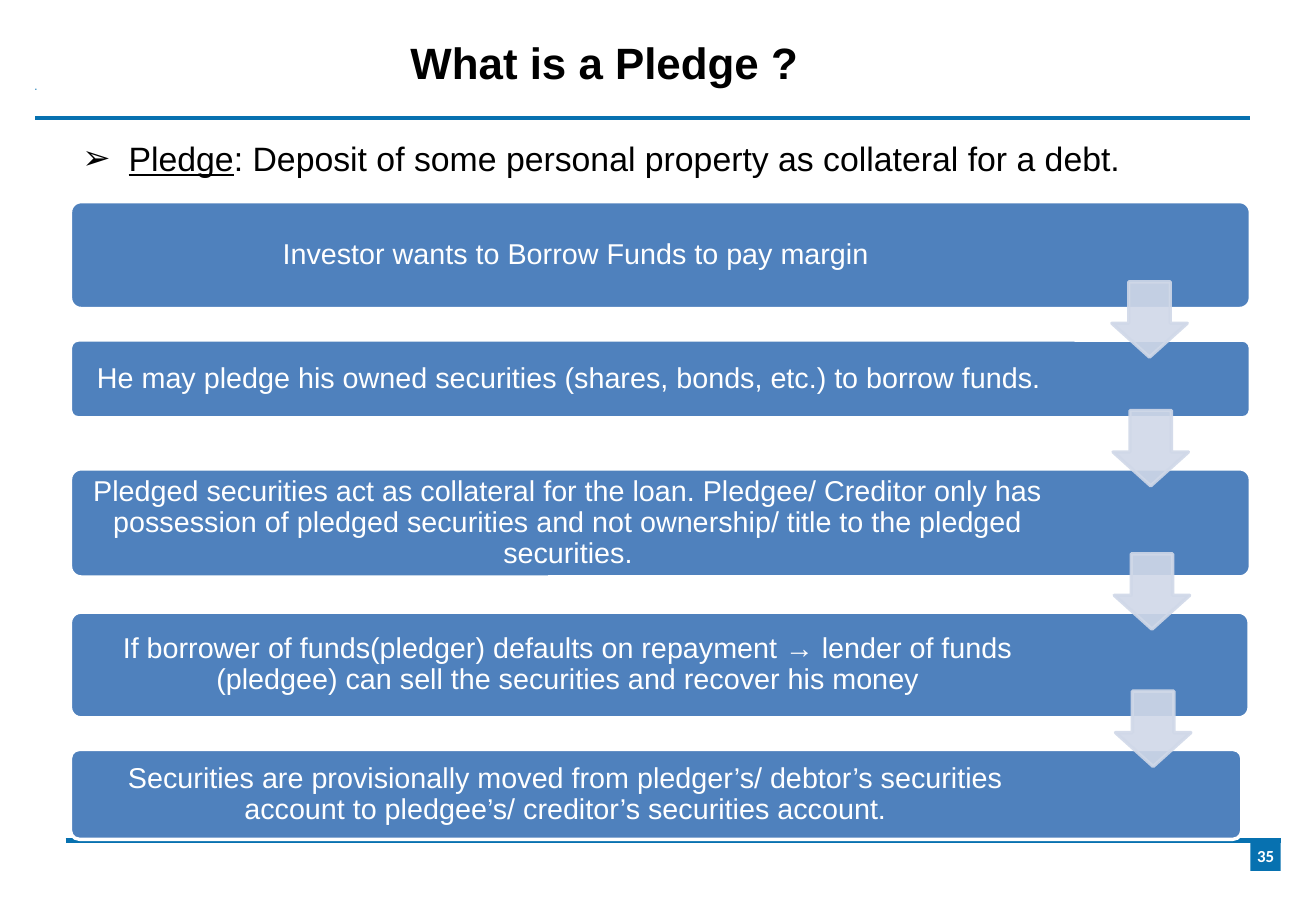
from pptx import Presentation
from pptx.dml.color import RGBColor as RGB
from pptx.enum.shapes import MSO_CONNECTOR as Conn, MSO_SHAPE as Shape
from pptx.enum.text import MSO_ANCHOR as Anchor, PP_ALIGN as Align
from pptx.oxml.ns import qn
from pptx.util import Inches, Pt
from lxml.etree import SubElement as Sub

# Content
TITLE = "What is a Pledge ?"
TERM, MEANING = "Pledge", ": Deposit of some personal property as collateral for a debt."
PAGE = "35"
# Steps: text, top, height, box width, text width
STEPS = [
    ("Investor wants to Borrow Funds to pay margin", 1.66, 0.88, 9.71, 8.26),
    ("He may pledge his owned securities (shares, bonds, etc.) to borrow funds.",
     2.8, 0.64, 9.71, 8.15),
    ("Pledged securities act as collateral for the loan. Pledgee/ Creditor only has "
     "possession of pledged securities and not ownership/ title to the pledged securities.",
     3.86, 0.89, 9.71, 8.13),
    ("If borrower of funds(pledger) defaults on repayment → lender of funds "
     "(pledgee) can sell the securities and recover his money", 5.04, 0.87, 9.7, 8.13),
    ("Securities are provisionally moved from pledger’s/ debtor’s securities "
     "account to pledgee’s/ creditor’s securities account.", 6.17, 0.74, 9.64, 8.09),
]

# Theme
THEME = {
    "rule": "0771B0", "box": "4F81BD", "arrow": "D0D8E8", "white": "FFFFFF", "black": "000000",
    "title": 26, "lead": 20, "step": 17, "page": 10, "font": "Arial", "small": "Calibri",
}

# Layout, in inches
WIDE, HIGH = 10.83, 7.5
LEFT = 0.58
RULES = [(0.29, 0.97), (0.54, 6.92)]
SPAN = 10
PAD = 0.03
ARROW, DIP = 0.62, 0.14
BADGE = 0.25

deck = Presentation()
deck.slide_width, deck.slide_height = Inches(WIDE), Inches(HIGH)
slide = deck.slides.add_slide(deck.slide_layouts[6])
shapes = slide.shapes


def tint(name):
    return RGB.from_string(THEME[name])


def put(obj, **vals):
    for key, val in vals.items():
        setattr(obj, key, val)


def fade(fill, share):
    color = fill.find(".//" + qn("a:srgbClr"))
    Sub(color, qn("a:alpha"), val=str(share * 1000))


def block(kind, x, y, w, h, fill, edge=None):
    item = shapes.add_shape(kind, *map(Inches, (x, y, w, h)))
    item.shadow.inherit = False
    item.fill.solid()
    item.fill.fore_color.rgb = tint(fill)
    if edge:
        item.line.color.rgb = tint(edge)
        item.line.width = Pt(2)
    else:
        item.line.fill.background()
    return item


def label(x, y, w, h):
    return shapes.add_textbox(*map(Inches, (x, y, w, h)))


def write(item, runs, size, color, font="font", side=0.05, edge=0.05,
          anchor=Anchor.MIDDLE, align=Align.CENTER, **para):
    frame = item.text_frame
    put(frame, word_wrap=True, vertical_anchor=anchor,
        margin_left=Inches(side), margin_right=Inches(side),
        margin_top=Inches(edge), margin_bottom=Inches(edge))
    line = frame.paragraphs[0]
    put(line, alignment=align, **para)
    for text, style in runs:
        run = line.add_run()
        run.text = text
        put(run.font, name=THEME[font], size=Pt(THEME[size]), **style)
        run.font.color.rgb = tint(color)
    return line


# Rules above and below the content
for x, y in RULES:
    rule = shapes.add_connector(Conn.STRAIGHT, *map(Inches, (x, y, x + SPAN, y)))
    rule.line.color.rgb = tint("rule")
    rule.line.width = Pt(2.5)
    Sub(rule._element.spPr, qn("a:effectLst"))
block(Shape.RECTANGLE, RULES[0][0], 0.73, 0.01, 0.01, "rule")

# Title and definition
write(label(LEFT, 0.25, 8.79, 0.53), [(TITLE, {"bold": True})], "title", "black",
      anchor=Anchor.BOTTOM)
lead = write(label(LEFT, 1.05, 9.77, 1.21), [(TERM, {"underline": True}), (MEANING, {})],
             "lead", "black", side=0.1, anchor=Anchor.TOP, align=Align.JUSTIFY,
             line_spacing=1.1)
props = lead._p.get_or_add_pPr()
props.set("marL", str(Inches(0.38)))
props.set("indent", str(-Inches(0.38)))
Sub(props, qn("a:buFont"), typeface=THEME["font"])
Sub(props, qn("a:buChar"), char="➢")

# Steps
for text, top, high, wide, room in STEPS:
    box = block(Shape.ROUNDED_RECTANGLE, LEFT, top, wide, high, "box", "white")
    box.adjustments[0] = 0.1
    write(label(LEFT + PAD, top + PAD, room, high - 2 * PAD), [(text, {})], "step", "white",
          side=0.07, edge=0.07, line_spacing=0.9, space_after=Pt(6))

# Arrows, each with its tip just inside the next step
for i, (_, top, *_) in enumerate(STEPS[1:]):
    arrow = block(Shape.DOWN_ARROW, 9.15 + i * 0.01, top + DIP - ARROW, ARROW, ARROW,
                  "arrow", "arrow")
    arrow.adjustments[0], arrow.adjustments[1] = 0.55, 0.45
    props = arrow._element.spPr
    for tag in ("a:solidFill", "a:ln"):
        fade(props.find(qn(tag)), 90)

# Page number
x, y = RULES[1]
badge = block(Shape.RECTANGLE, x + SPAN - BADGE, y, BADGE, BADGE, "rule")
write(badge, [(PAGE, {"bold": True})], "page", "white", "small", side=0, edge=0)

deck.save("out.pptx")
